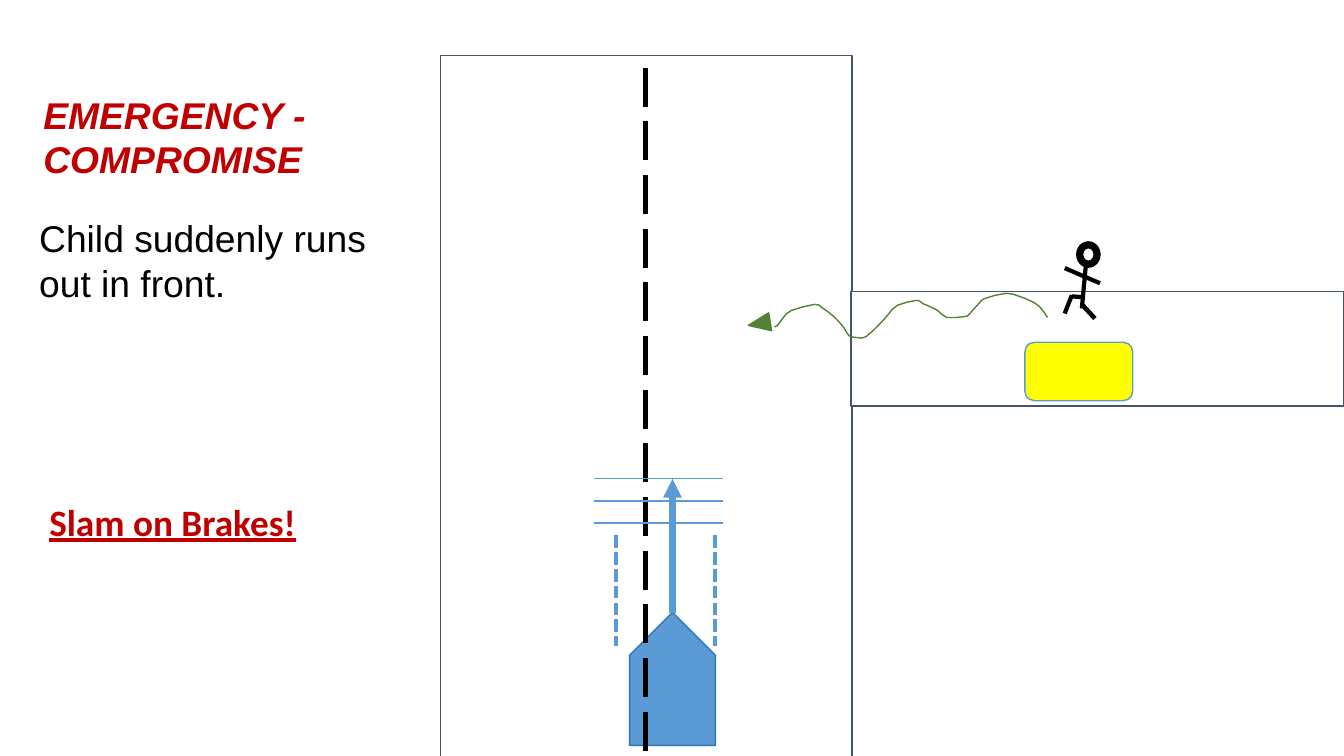
from pptx import Presentation
from pptx.dml.color import RGBColor
from pptx.enum import dml, shapes, text
from pptx.oxml.ns import qn
from pptx.util import Inches, Pt

WHITE = RGBColor(0xFF, 0xFF, 0xFF)
BLACK = RGBColor(0, 0, 0)
RED = RGBColor(0xC0, 0, 0)
SLATE = RGBColor(0x44, 0x54, 0x6A)
BLUE = RGBColor(0x5B, 0x9B, 0xD5)
DARK_BLUE = RGBColor(0x2E, 0x75, 0xB6)
GREEN = RGBColor(0x54, 0x82, 0x35)
YELLOW = RGBColor(0xFF, 0xFF, 0)
SHAPE = shapes.MSO_SHAPE
LONG_DASH = dml.MSO_LINE.LONG_DASH
SHORT_DASH = dml.MSO_LINE.SQUARE_DOT

TITLE = "EMERGENCY - COMPROMISE"
EVENT = "Child suddenly runs out in front."
ACTION = "Slam on Brakes!"

ROAD = (4.37, 0.55, 4.08, 6.97)
CAR = (6.01, 6.31, 1.32, 0.85)
SIDE_STREET = (8.44, 2.89, 4.89, 1.14)
PARKED_CAR = (10.41, 3.15, 0.58, 1.07)
CENTRE_LINE = (6.4, 0.67, 6.4, 7.5)
TRAVEL_ARROW = (6.67, 6.08, 6.67, 4.75)
STOP_LINE_YS = [4.97, 4.75, 5.19]
SKID_XS = [7.09, 6.11]
CHILD_HEAD = (10.68, 2.4, 0.23, 0.25)
CHILD_LIMBS = [  # start x, start y, end x, end y, width
    (10.86, 3.16, 10.73, 3.02, 3.25),
    (10.56, 2.66, 10.91, 2.81, 3),
    (10.63, 2.93, 10.56, 3.11, 3),
    (10.77, 2.63, 10.73, 3.06, 3),
    (10.63, 2.94, 10.75, 2.95, 3),
]
RUN_PATH = [
    (10.39, 3.15), (10.31, 3.04), (10.21, 2.98), (10.11, 2.94), (9.98, 2.91),
    (9.77, 2.96), (9.71, 3.01), (9.61, 3.12), (9.57, 3.14), (9.39, 3.15),
    (9.3, 3.08), (9.15, 3.01), (9.09, 2.98), (8.9, 3.03), (8.81, 3.12),
    (8.73, 3.21), (8.59, 3.34), (8.51, 3.35), (8.42, 3.33), (8.37, 3.25),
    (8.27, 3.14), (8.15, 3.05), (8.08, 3.02), (7.85, 3.08), (7.77, 3.15),
    (7.71, 3.23), (7.68, 3.24),
]
RUN_HEAD = (7.44, 3.1, 0.18, 0.22)


def smooth_curve(knots):
    """Return the knots with a Catmull-Rom midpoint between each pair."""
    padded = [knots[0], *knots, knots[-1]]
    points = [knots[0]]
    for a, b, c, d in zip(padded, padded[1:], padded[2:], padded[3:]):
        middle = tuple((9 * (q + r) - p - s) / 16
                       for p, q, r, s in zip(a, b, c, d))
        points += [middle, c]
    return points


def add_figure(parent, kind, frame, fill, line, rotation=0):
    figure = parent.add_shape(kind, *map(Inches, frame))
    figure.shadow.inherit = False
    figure.fill.solid()
    figure.fill.fore_color.rgb = fill
    figure.line.color.rgb = line
    figure.line.width = Pt(1)
    figure.rotation = rotation


def add_line(parent, ends, color, width, dash=None, arrow=False):
    line = parent.add_connector(shapes.MSO_CONNECTOR.STRAIGHT, *map(Inches, ends))
    line.line.color.rgb = color
    line.line.width = Pt(width)
    if dash:
        line.line.dash_style = dash
    properties = line._element.spPr
    if arrow:
        outline = properties.find(qn("a:ln"))
        outline.append(outline.makeelement(qn("a:tailEnd"), {"type": "triangle"}))
    properties.append(properties.makeelement(qn("a:effectLst"), {}))


def write(box, wording, font, color, bold=False, italic=False, underline=False):
    frame = box.text_frame
    frame.word_wrap = True
    frame.auto_size = text.MSO_AUTO_SIZE.SHAPE_TO_FIT_TEXT
    frame.vertical_anchor = text.MSO_ANCHOR.TOP
    para = frame.paragraphs[0]
    para.alignment = text.PP_ALIGN.LEFT
    para.line_spacing = 1.0
    para.space_before = Pt(0)
    span = para.add_run()
    span.text = wording
    span.font.name = font
    span.font.size = Pt(26.67)
    span.font.color.rgb = color
    span.font.bold = bold
    span.font.italic = italic
    span.font.underline = underline


def main():
    deck = Presentation()
    deck.slide_width, deck.slide_height = Inches(13.33), Inches(7.5)
    page = deck.slides.add_slide(deck.slide_layouts[5])
    scene = page.shapes

    add_figure(scene, SHAPE.RECTANGLE, ROAD, WHITE, SLATE)
    add_figure(scene, SHAPE.PENTAGON, CAR, BLUE, DARK_BLUE, 270)
    add_figure(scene, SHAPE.RECTANGLE, SIDE_STREET, WHITE, SLATE)
    add_line(scene, CENTRE_LINE, BLACK, 3.5, LONG_DASH)

    child = scene.add_group_shape().shapes
    add_figure(child, SHAPE.DONUT, CHILD_HEAD, BLACK, BLACK)
    for *ends, width in CHILD_LIMBS:
        add_line(child, ends, BLACK, width)

    run = scene.add_group_shape().shapes
    start, *rest = [(Inches(x), Inches(y)) for x, y in smooth_curve(RUN_PATH)]
    builder = run.build_freeform(*start)
    builder.add_line_segments(rest, close=False)
    trail = builder.convert_to_shape()
    trail.shadow.inherit = False
    trail.fill.background()
    trail.line.color.rgb = GREEN
    trail.line.width = Pt(1)
    add_figure(run, SHAPE.ISOSCELES_TRIANGLE, RUN_HEAD, GREEN, GREEN, 260.6)

    for y in STOP_LINE_YS:
        add_line(scene, (5.89, y, 7.17, y), BLUE, 1)
    for x in SKID_XS:
        add_line(scene, (x, 5.31, x, 6.41), BLUE, 3, SHORT_DASH)
    add_figure(scene, SHAPE.ROUNDED_RECTANGLE, PARKED_CAR, YELLOW, BLUE, 270)
    add_line(scene, TRAVEL_ARROW, BLUE, 4.5, arrow=True)

    title = scene.title
    title.left, title.top = Inches(0.33), Inches(0.86)
    title.width, title.height = Inches(3.71), Inches(1)
    write(title, TITLE, "Arial", RED, bold=True, italic=True)
    event = scene.add_textbox(*map(Inches, (0.29, 2.09, 3.86, 1)))
    write(event, EVENT, "Arial", BLACK)
    action = scene.add_textbox(*map(Inches, (0.39, 4.9, 3.38, 0.55)))
    write(action, ACTION, "Calibri", RED, bold=True, underline=True)

    deck.save("out.pptx")


if __name__ == "__main__":
    main()
